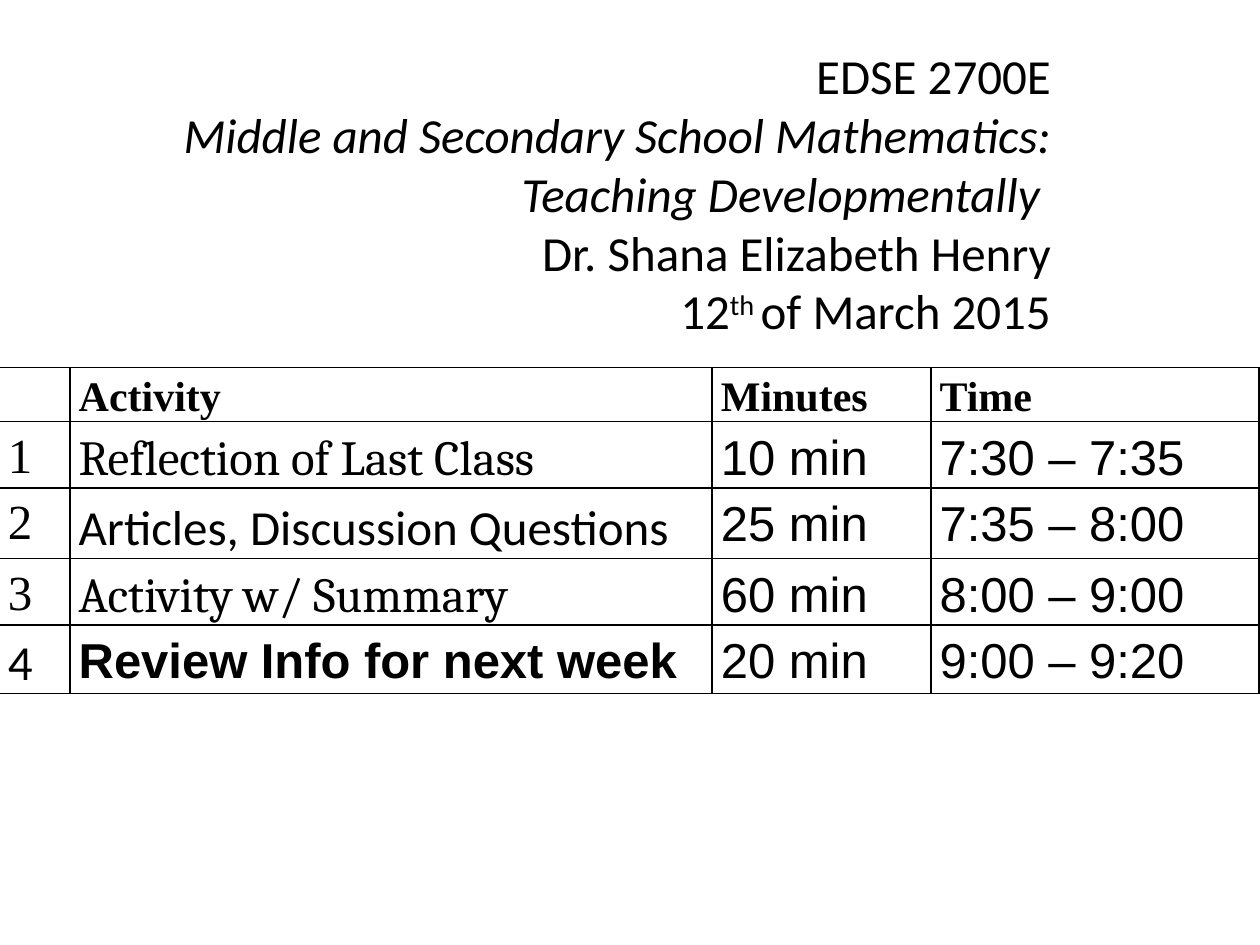
from lxml.etree import SubElement
from pptx import Presentation
from pptx.dml.color import RGBColor
from pptx.enum.text import MSO_ANCHOR, PP_ALIGN
from pptx.oxml.ns import qn
from pptx.util import Pt

COLORS = {"ink": "000000", "background": "FFFFFF"}
INK = RGBColor.from_string(COLORS["ink"])

# Heading paragraphs: runs of (text, italic, superscript)
HEADING = [
    [("EDSE 2700E", False, False)],
    [("Middle and Secondary School Mathematics: Teaching Developmentally ", True, False)],
    [("Dr. Shana Elizabeth Henry", False, False)],
    [("12", False, False), ("th ", False, True), ("of March 2015", False, False)],
]

# Agenda: titles, then (number, activity, minutes, time)
AGENDA = [
    ("", "Activity", "Minutes", "Time"),
    ("1", "Reflection of Last Class", "10 min", "7:30 – 7:35"),
    ("2", "Articles, Discussion Questions", "25 min", "7:35 – 8:00"),
    ("3", "Activity w/ Summary", "60 min", "8:00 – 9:00"),
    ("4", "Review Info for next week", "20 min", "9:00 – 9:20"),
]
NUMBER_FONTS = ["Times New Roman", "Times New Roman", "Times New Roman", "Calibri"]
ACTIVITY_FONTS = ["Cambria", "Calibri", "Cambria", "Arial"]
COLUMN_WIDTHS = [40.5, 367, 125, 187.5]
ROW_HEIGHTS = [31, 38, 40, 38, 39]


def format_run(run, font_name, size, bold=False, italic=False):
    run.font.name = font_name
    run.font.size = Pt(size)
    run.font.bold = bold
    run.font.italic = italic
    run.font.color.rgb = INK


def add_borders(cell):
    properties = cell._tc.get_or_add_tcPr()
    for position, side in enumerate(("a:lnL", "a:lnR", "a:lnT", "a:lnB")):
        line = SubElement(properties, qn(side), w=str(Pt(1)))
        fill = SubElement(line, qn("a:solidFill"))
        SubElement(fill, qn("a:srgbClr"), val=COLORS["ink"])
        properties.insert(position, line)  # borders come before the fill


def cell_font(row, column):
    if row == 0:
        return "Times New Roman"
    if column == 0:
        return NUMBER_FONTS[row - 1]
    return ACTIVITY_FONTS[row - 1] if column == 1 else "Arial"


presentation = Presentation()
presentation.slide_width, presentation.slide_height = Pt(720), Pt(540)
slide = presentation.slides.add_slide(presentation.slide_layouts[6])
slide.background.fill.solid()
slide.background.fill.fore_color.rgb = RGBColor.from_string(COLORS["background"])

# Agenda table
table = slide.shapes.add_table(
    len(AGENDA), len(COLUMN_WIDTHS), Pt(-0.5), Pt(210),
    Pt(sum(COLUMN_WIDTHS)), Pt(sum(ROW_HEIGHTS))).table
table.first_row = table.horz_banding = False
for column, width in zip(table.columns, COLUMN_WIDTHS):
    column.width = Pt(width)
for row, height in zip(table.rows, ROW_HEIGHTS):
    row.height = Pt(height)

for row, texts in enumerate(AGENDA):
    for column, text in enumerate(texts):
        cell = table.cell(row, column)
        cell.fill.background()
        add_borders(cell)
        cell.margin_left = cell.margin_right = Pt(5)
        cell.margin_top = Pt(0.75 if row and column else 0)
        cell.margin_bottom = Pt(0)
        cell.vertical_anchor = MSO_ANCHOR.TOP
        cell.text_frame.text = text
        paragraph = cell.text_frame.paragraphs[0]
        paragraph.line_spacing = 1.15
        font_name = cell_font(row, column)
        if row and column and font_name == "Arial":
            paragraph.space_after = Pt(10)
        bold = row == 0 or (column == 1 and font_name == "Arial")
        for run in paragraph.runs:
            format_run(run, font_name, 28 if row else 24, bold)

# Course heading
heading = slide.shapes.add_textbox(Pt(36), Pt(22.5), Pt(571.5), Pt(220))
text_frame = heading.text_frame
text_frame.word_wrap = True
for index, pieces in enumerate(HEADING):
    paragraph = text_frame.add_paragraph() if index else text_frame.paragraphs[0]
    paragraph.alignment = PP_ALIGN.RIGHT
    for text, italic, superscript in pieces:
        run = paragraph.add_run()
        run.text = text
        format_run(run, "Calibri", 28, italic=italic)
        if superscript:
            run.font._element.set("baseline", "30000")

presentation.save("out.pptx")
